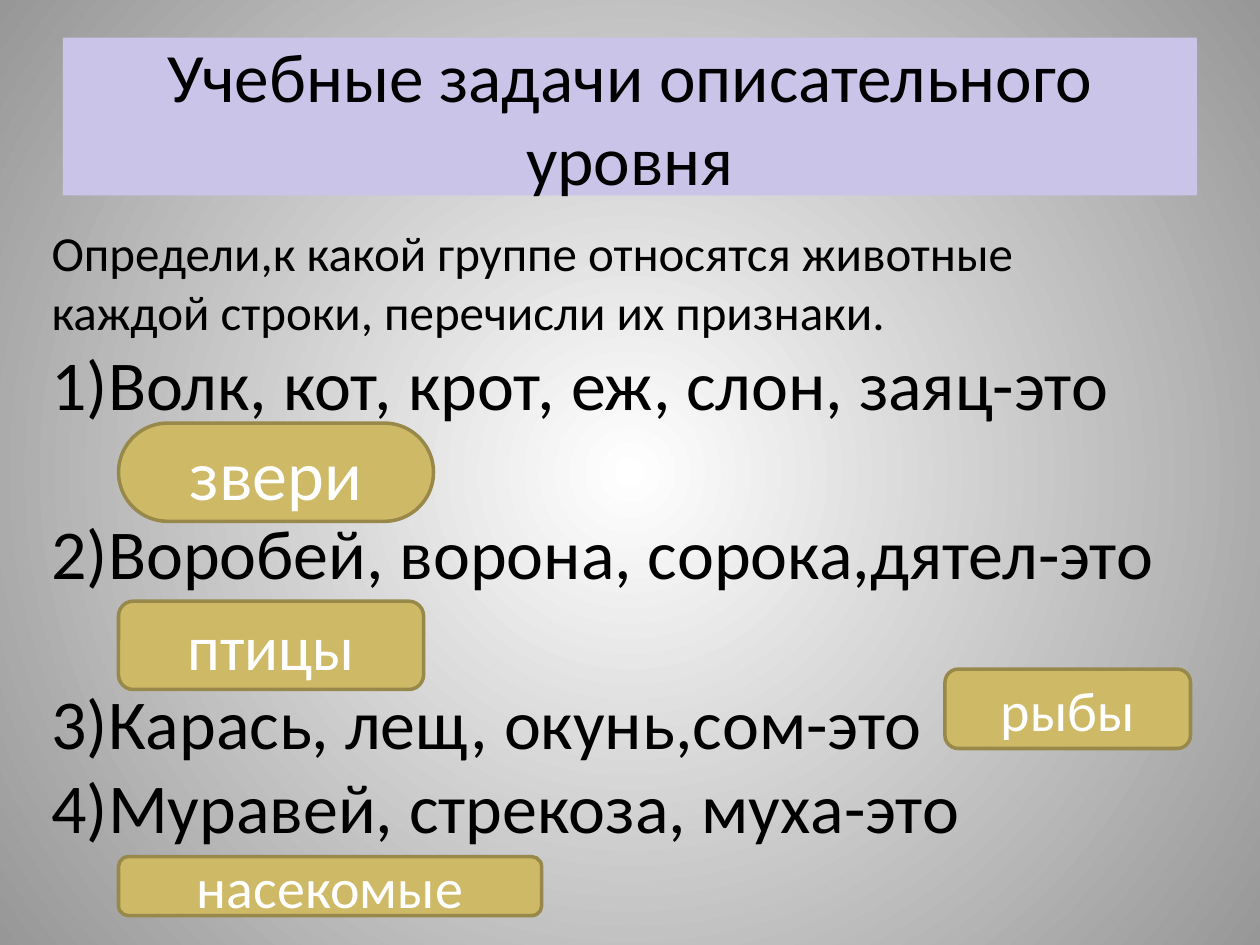
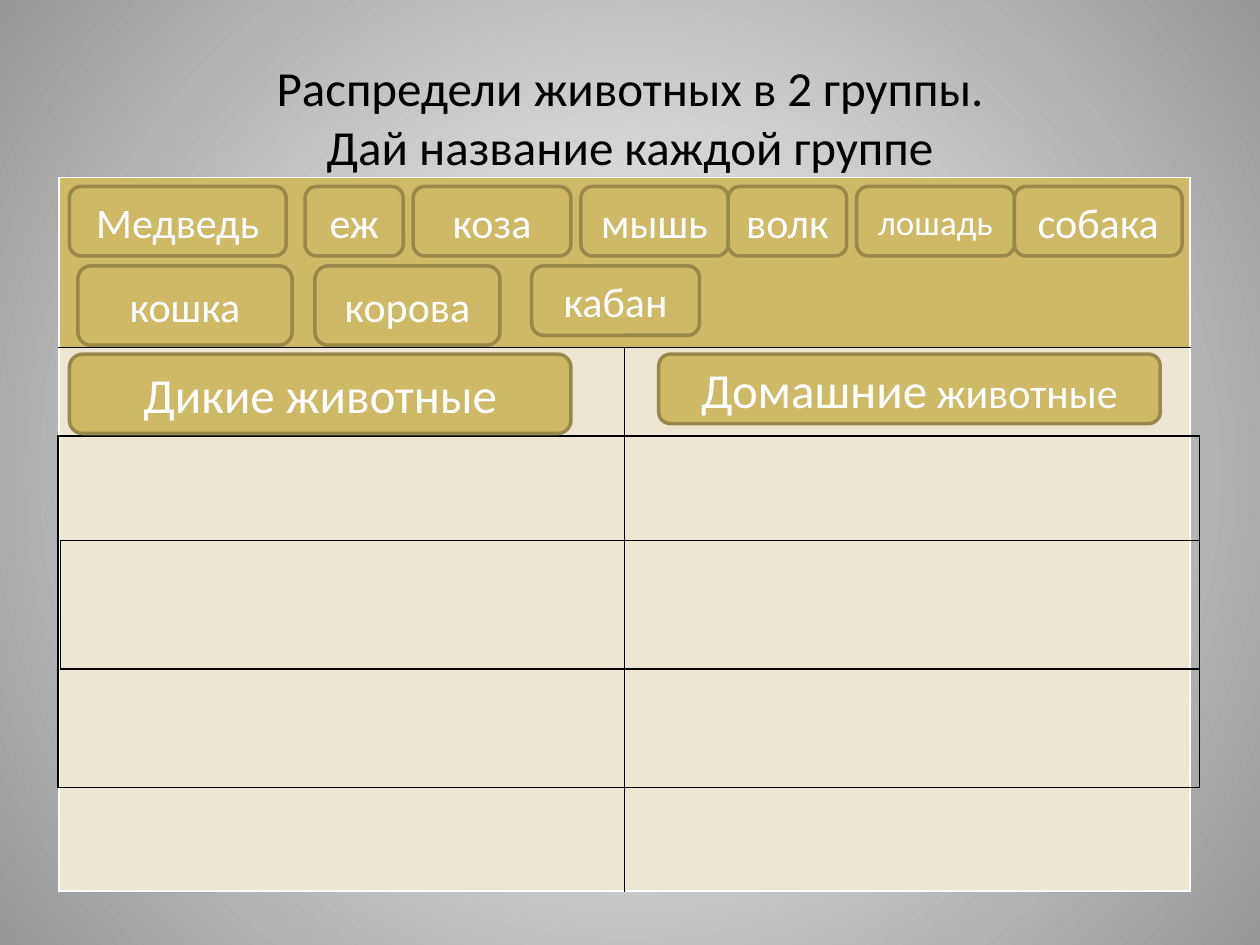
from dataclasses import dataclass
from typing import Any

from pptx import Presentation
from pptx.dml.color import RGBColor
from pptx.enum.shapes import MSO_SHAPE
from pptx.enum.text import MSO_ANCHOR, PP_ALIGN
from pptx.oxml import parse_xml
from pptx.oxml.ns import nsdecls, qn
from pptx.slide import Slide
from pptx.util import Cm, Pt


# Shared look
@dataclass(frozen=True)
class Theme:
    font: str = "Calibri"
    ink: str = "000000"
    light: str = "FFFFFF"
    edge_gray: str = "979797"
    lilac: str = "CBC4E9"
    gold: str = "CEB966"
    gold_line: str = "98894B"
    cream: str = "EDE6D3"
    title: float = 39.6
    task: float = 40
    label: float = 36
    answer: float = 32
    heading: float = 28
    animal: float = 24
    small: float = 20
    line: float = 2
    border: float = 1


THEME = Theme()


@dataclass(frozen=True)
class Span:
    text: str
    size: float


@dataclass(frozen=True)
class Area:
    """Left, top, width and height in centimetres."""
    left: float
    top: float
    width: float
    height: float

    def lengths(self) -> tuple[Cm, Cm, Cm, Cm]:
        return Cm(self.left), Cm(self.top), Cm(self.width), Cm(self.height)


@dataclass(frozen=True)
class Card:
    area: Area
    spans: tuple[Span, ...]
    rounding: float = 0.1667


TITLE_AREA = Area(1.27, 0.76, 22.86, 3.18)


def apply_format(target: Any, values: dict[str, Any]) -> None:
    for name, value in values.items():
        setattr(target, name, value)


def rgb(color: str) -> RGBColor:
    return RGBColor.from_string(color)


# Drawing helpers
def write_spans(para: Any, spans: tuple[Span, ...], color: str) -> None:
    for span in spans:
        for index, part in enumerate(span.text.split("\n")):
            if index:
                para.add_line_break()
            run = para.add_run()
            run.text = part
            apply_format(run.font, {"name": THEME.font, "size": Pt(span.size)})
            run.font.color.rgb = rgb(color)


def center_text(frame: Any, spans: tuple[Span, ...], color: str) -> None:
    apply_format(frame, {"word_wrap": True, "vertical_anchor": MSO_ANCHOR.MIDDLE})
    para = frame.paragraphs[0]
    para.alignment = PP_ALIGN.CENTER
    write_spans(para, spans, color)


def add_page(deck: Any) -> Slide:
    page = deck.slides.add_slide(deck.slide_layouts[6])
    page.background.fill.gradient()
    gradient = next(page.element.iter(qn("a:gradFill")))
    radial = parse_xml(
        f'<a:gradFill {nsdecls("a")} rotWithShape="1"><a:gsLst>'
        f'<a:gs pos="0"><a:srgbClr val="{THEME.light}"/></a:gs>'
        f'<a:gs pos="100000"><a:srgbClr val="{THEME.edge_gray}"/></a:gs></a:gsLst>'
        '<a:path path="circle"><a:fillToRect l="50000" t="50000" r="50000" b="50000"/>'
        '</a:path></a:gradFill>')
    gradient.getparent().replace(gradient, radial)
    return page


def add_title(page: Slide, span: Span, fill: str | None = None) -> None:
    box = page.shapes.add_textbox(*TITLE_AREA.lengths())
    if fill:
        box.fill.solid()
        box.fill.fore_color.rgb = rgb(fill)
    center_text(box.text_frame, (span,), THEME.ink)


def add_card(page: Slide, card: Card) -> None:
    shape = page.shapes.add_shape(MSO_SHAPE.ROUNDED_RECTANGLE, *card.area.lengths())
    shape.adjustments[0] = card.rounding
    shape.shadow.inherit = False
    shape.fill.solid()
    shape.fill.fore_color.rgb = rgb(THEME.gold)
    shape.line.color.rgb = rgb(THEME.gold_line)
    shape.line.width = Pt(THEME.line)
    center_text(shape.text_frame, card.spans, THEME.light)


def style_cell(cell: Any, borders: dict[str, str], fill: str | None = None) -> None:
    properties = cell._tc.get_or_add_tcPr()
    for side in "LRTB":
        properties.append(parse_xml(
            f'<a:ln{side} {nsdecls("a")} w="{Pt(THEME.border)}"><a:solidFill>'
            f'<a:srgbClr val="{borders.get(side, THEME.ink)}"/></a:solidFill></a:ln{side}>'))
    if fill:
        cell.fill.solid()
        cell.fill.fore_color.rgb = rgb(fill)
    else:
        cell.fill.background()


def add_grid(page: Slide, area: Area, row_heights: list[float], columns: int) -> Any:
    table = page.shapes.add_table(len(row_heights), columns, *area.lengths()).table
    apply_format(table, {"first_row": False, "horz_banding": False})
    for row, height in zip(table.rows, row_heights):
        row.height = Cm(height)
    return table


# Slide 1: name the group of each row of animals
TASK_LINES = [
    ("Определи,к какой группе относятся животные каждой строки, перечисли их признаки.",
     THEME.heading, 0),
    ("1)Волк, кот, крот, еж, слон, заяц-это", THEME.task, 0),
    ("2)Воробей, ворона, сорока,дятел-это", THEME.task, 48.8),
    ("3)Карась, лещ, окунь,сом-это", THEME.task, 48.8),
    ("4)Муравей, стрекоза, муха-это", THEME.task, 0),
]
ANSWERS = [
    Card(Area(2.39, 8.53, 6.35, 1.98), (Span("звери", THEME.task),), 0.5),
    Card(Area(2.39, 12.12, 6.15, 1.78), (Span("птицы", THEME.label),)),
    Card(Area(19.05, 13.49, 4.95, 1.6), (Span("рыбы", THEME.answer),)),
    Card(Area(2.39, 17.27, 8.53, 1.19), (Span("насекомые", THEME.answer),)),
]


def build_naming_page(deck: Any) -> None:
    page = add_page(deck)
    add_title(page, Span("Учебные задачи описательного уровня", THEME.title), THEME.lilac)
    box = page.shapes.add_textbox(*Area(0.79, 4.37, 23.01, 16.33).lengths())
    frame = box.text_frame
    frame.word_wrap = True
    for index, (text, size, gap) in enumerate(TASK_LINES):
        para = frame.add_paragraph() if index else frame.paragraphs[0]
        para.space_before = Pt(gap)
        write_spans(para, (Span(text, size),), THEME.ink)
    for card in ANSWERS:
        add_card(page, card)


# Slide 2: sort the animals into two groups
FIRST_ROW = [
    ("Медведь", 1.4, 4.37, THEME.animal),
    ("еж", 6.15, 1.98, THEME.animal),
    ("коза", 8.33, 3.18, THEME.animal),
    ("мышь", 11.71, 2.97, THEME.animal),
    ("волк", 14.68, 2.39, THEME.animal),
    ("лошадь", 17.27, 3.18, THEME.small),
    ("собака", 20.45, 3.38, THEME.animal),
]
SECOND_ROW = [
    ("кошка", 1.57, 4.32, 1.6),
    ("корова", 6.35, 3.73, 1.6),
    ("кабан", 10.72, 3.38, 1.4),
]
GROUP_HEADINGS = [
    Card(Area(13.28, 7.14, 10.11, 1.4),
         (Span("Домашние", THEME.heading), Span(" животные", THEME.animal))),
    Card(Area(1.4, 7.14, 10.11, 1.6), (Span("Дикие животные", THEME.heading),)),
]
OUTLINES = [Area(1.17, 8.79, 23.01, 7.09), Area(1.22, 10.9, 22.96, 2.59)]


def build_sorting_page(deck: Any) -> None:
    page = add_page(deck)
    add_title(page, Span("Распредели животных в 2 группы.\nДай название каждой группе",
                         THEME.heading))

    # Sorting table and the ruled lines over it
    groups = add_grid(page, Area(1.19, 3.58, 22.8, 14.38), [3.43, 10.95], 2)
    groups.cell(0, 0).merge(groups.cell(0, 1))
    for column, outer_side in enumerate("LR"):
        style_cell(groups.cell(0, column), dict.fromkeys("LRT", THEME.light), THEME.gold)
        style_cell(groups.cell(1, column), dict.fromkeys(outer_side + "B", THEME.light),
                   THEME.cream)
    for area in OUTLINES:
        style_cell(add_grid(page, area, [area.height], 1).cell(0, 0), {})

    # Animal cards and group headings
    cards = [Card(Area(left, 3.76, width, 1.4), (Span(name, size),))
             for name, left, width, size in FIRST_ROW]
    cards += [Card(Area(left, 5.36, width, height), (Span(name, THEME.animal),))
              for name, left, width, height in SECOND_ROW]
    for card in cards + GROUP_HEADINGS:
        add_card(page, card)


def main() -> None:
    deck = Presentation()
    apply_format(deck, {"slide_width": Cm(25.4), "slide_height": Cm(19.05)})
    build_naming_page(deck)
    build_sorting_page(deck)
    deck.save("out.pptx")


if __name__ == "__main__":
    main()
